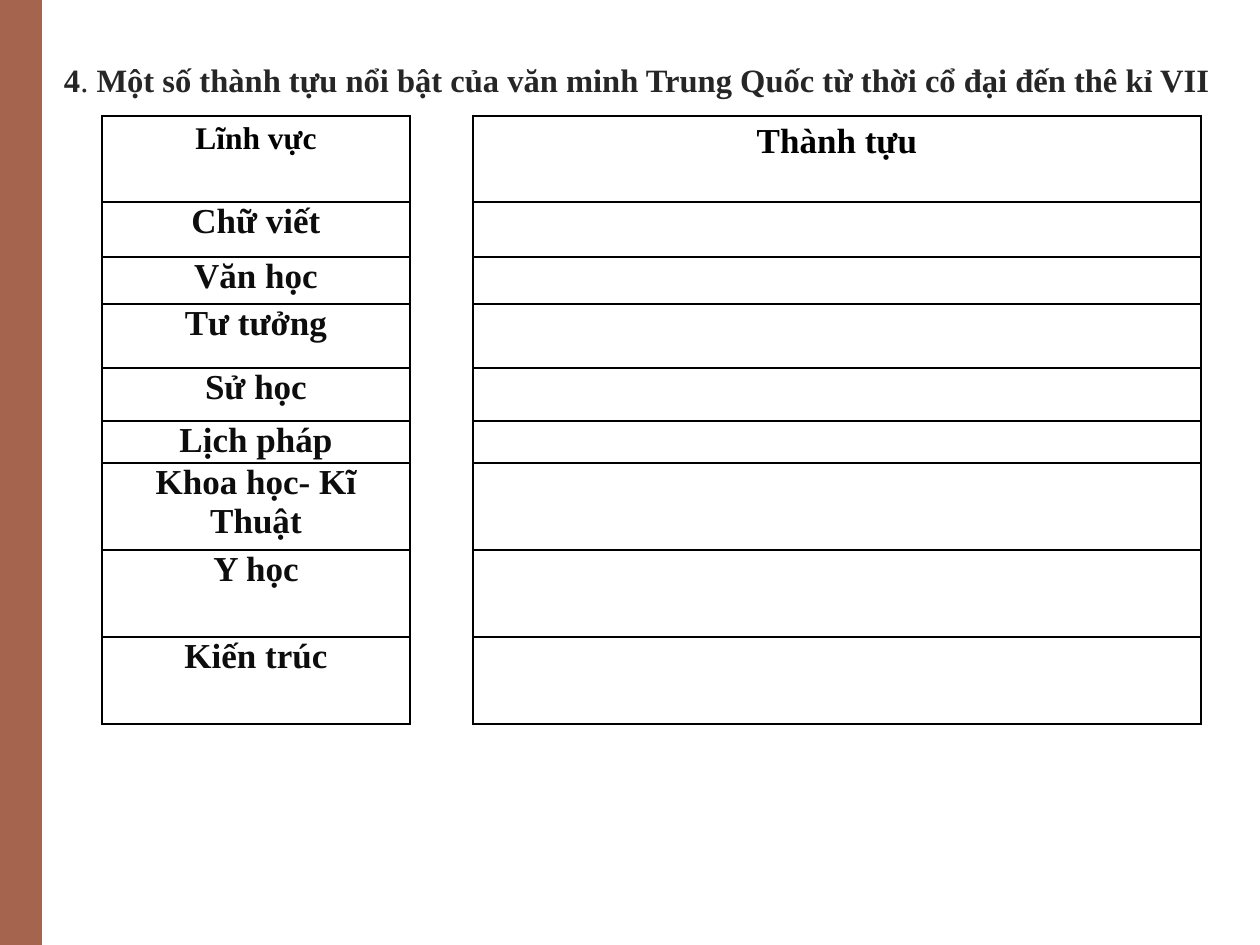
from lxml.etree import SubElement
from pptx import Presentation
from pptx.dml.color import RGBColor
from pptx.enum.shapes import MSO_SHAPE
from pptx.enum.text import MSO_ANCHOR, PP_ALIGN
from pptx.oxml.ns import qn
from pptx.util import Pt

PX = 914400 / 126
FONT = "Times New Roman"
BROWN = RGBColor(0xA5, 0x64, 0x4E)
TITLE_GREY = RGBColor(0x26, 0x26, 0x26)
BLACK = RGBColor(0, 0, 0)
NEAR_BLACK = RGBColor(0x0D, 0x0D, 0x0D)
NO_STYLE = "{2D5ABB26-0587-4C30-8999-92F81FD0307C}"

COLUMN_WIDTHS = [308, 63, 728]
ROW_HEIGHTS = [86, 55, 47, 64, 53, 42, 87, 87, 87]
FIELDS = ["Chữ viết", "Văn học", "Tư tưởng", "Sử học", "Lịch pháp",
          "Khoa học- Kĩ Thuật", "Y học", "Kiến trúc"]


def px(n):
    return round(n * PX)


def format_run(r, size, color, bold=True):
    r.font.name = FONT
    r.font.size = Pt(size)
    r.font.bold = bold
    r.font.color.rgb = color


def add_side_bar(s, x, y, w, h):
    sp = s.shapes.add_shape(MSO_SHAPE.RECTANGLE, px(x), px(y), px(w), px(h))
    sp.shadow.inherit = False
    sp.fill.solid()
    sp.fill.fore_color.rgb = BROWN
    sp.line.fill.background()


def add_title(s, x, y, w, h):
    tf = s.shapes.add_textbox(px(x), px(y), px(w), px(h)).text_frame
    tf.word_wrap = True
    tf.vertical_anchor = MSO_ANCHOR.MIDDLE
    tf.margin_top, tf.margin_bottom = px(18), px(4)
    p = tf.paragraphs[0]
    p.alignment = PP_ALIGN.CENTER
    parts = [
        ("4", True),
        (". ", False),
        ("Một số thành tựu nổi bật của văn minh Trung Quốc "
         "từ thời cổ đại đến thê kỉ VII", True),
    ]
    for text, bold in parts:
        r = p.add_run()
        r.text = text
        format_run(r, 18.6, TITLE_GREY, bold)


def set_borders(cell, sides):
    """Draw 1 pt black lines on the given sides, in the order L, R, T, B."""
    tcPr = cell._tc.get_or_add_tcPr()
    for side in sides:
        ln = SubElement(tcPr, qn(f"a:ln{side}"), w=str(Pt(1)))
        fill = SubElement(ln, qn("a:solidFill"))
        SubElement(fill, qn("a:srgbClr"), val=str(BLACK))


def write_cell(cell, text, size, color, line_spacing=None):
    cell.text_frame.text = text
    p = cell.text_frame.paragraphs[0]
    p.alignment = PP_ALIGN.CENTER
    p.line_spacing = line_spacing
    format_run(p.runs[0], size, color)


def add_achievement_table(s, x, y):
    shape = s.shapes.add_table(
        len(ROW_HEIGHTS), len(COLUMN_WIDTHS), px(x), px(y),
        px(sum(COLUMN_WIDTHS)), px(sum(ROW_HEIGHTS)))
    table = shape.table
    table.first_row = table.horz_banding = False
    table._tbl.tblPr.find(qn("a:tableStyleId")).text = NO_STYLE
    for column, width in zip(table.columns, COLUMN_WIDTHS):
        column.width = px(width)
    for row, height in zip(table.rows, ROW_HEIGHTS):
        row.height = px(height)
        for i, cell in enumerate(row.cells):
            cell.margin_left = cell.margin_right = px(8)
            cell.margin_top = cell.margin_bottom = 0
            set_borders(cell, "LR" if i == 1 else "LRTB")
            cell.fill.background()

    write_cell(table.cell(0, 0), "Lĩnh vực", 18, BLACK, 1.15)
    write_cell(table.cell(0, 2), "Thành tựu", 20, BLACK, 1.15)
    for i, field in enumerate(FIELDS, start=1):
        write_cell(table.cell(i, 0), field, 20, NEAR_BLACK)


def main():
    prs = Presentation()
    prs.slide_width, prs.slide_height = px(1260), px(945)
    s = prs.slides.add_slide(prs.slide_layouts[6])
    add_side_bar(s, 0, 0, 42, 945)
    add_title(s, 33, 23, 1208, 99)
    add_achievement_table(s, 102, 116)
    prs.save("out.pptx")


if __name__ == "__main__":
    main()
